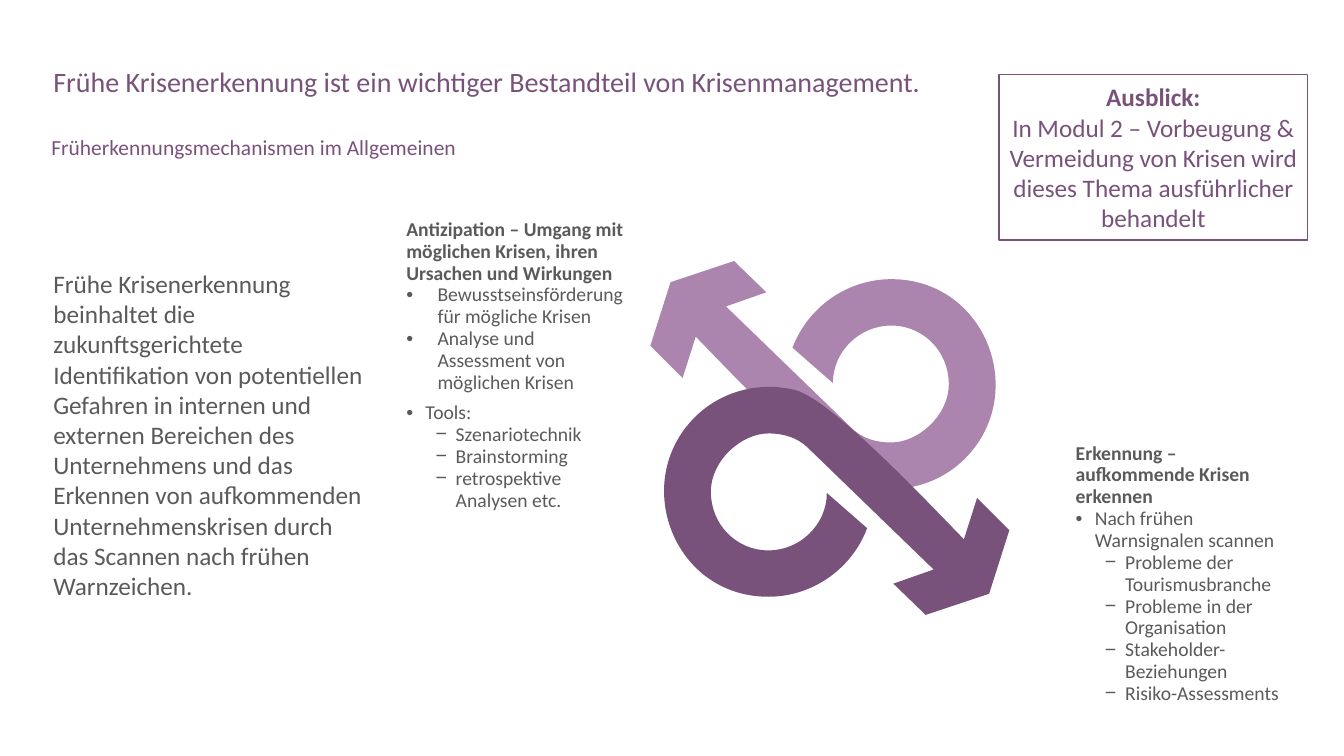
from dataclasses import dataclass

from lxml import etree
from pptx import Presentation
from pptx import util as u
from pptx.dml.color import RGBColor
from pptx.enum import shapes, text
from pptx.oxml.ns import qn


@dataclass(frozen=True)
class Theme:
    font: str = "Calibri"
    bullet_font: str = "Arial"
    plum: str = "79527B"
    lilac: str = "AB85AD"
    grey: str = "595A59"
    title: float = 20
    subtitle: float = 15.3
    body: float = 18
    detail: float = 14


THEME = Theme()
WIDTH, HEIGHT = u.Inches(13.33), u.Inches(7.5)
COLUMN, ROW = WIDTH / 100, HEIGHT / 100  # the slide is a 100 x 100 grid

# Paragraph style: bullet, level, left margin and hanging indent in inches, space before
HEADING = None
POINT = ("•", 0, 0.31, 0.31, 0)
TIGHT_POINT = ("•", 0, 0.19, 0.19, 0)
SPACED_POINT = ("•", 0, 0.19, 0.19, 6)
DASH = ("−", 1, 0.49, 0.2, 0)

# Looped arrow in a 3.76 x 2.33 field: two numbers are a corner, six are a curve
ARROW_FIELD = (3.76, 2.33)
ARROW = [
    (3.12, 1.96), (2.86, 2.22, 2.48, 2.32, 2.12, 2.23), (1.76, 2.13, 0.81, 1.12, 0.45, 0.75),
    (0.32, 1.16), (0, 0.84), (0.2, 0.21), (0.83, 0), (1.15, 0.31), (0.75, 0.45), (2.01, 1.67),
    (2.1, 1.75, 2.22, 1.8, 2.39, 1.8), (2.65, 1.8, 2.96, 1.54, 2.96, 1.22),
    (2.96, 0.9, 2.71, 0.64, 2.39, 0.64), (2.07, 0.64, 1.81, 0.9, 1.81, 1.21),
    (1.41, 0.86), (1.56, 0.46, 1.95, 0.18, 2.39, 0.18), (3.33, 0.18, 3.76, 1.32, 3.12, 1.96),
]


def place(box):
    left, top, width, height = box
    return [u.Emu(round(v)) for v in (left * COLUMN, top * ROW, width * COLUMN, height * ROW)]


def style(paragraph, size, color, bold=False):
    for run in paragraph.runs:
        run.font.name, run.font.size, run.font.bold = THEME.font, u.Pt(size), bold
        run.font.color.rgb = RGBColor.from_string(color)


def set_insets(frame, side, end):
    frame.word_wrap = True
    frame.margin_left = frame.margin_right = u.Inches(side)
    frame.margin_top = frame.margin_bottom = u.Inches(end)


def add_bullet(paragraph, mark, level, margin, hanging, before):
    paragraph.level = level
    properties = paragraph._p.get_or_add_pPr()
    properties.set("marL", str(u.Inches(margin)))
    properties.set("indent", str(-u.Inches(hanging)))
    color = etree.SubElement(properties, qn("a:buClr"))
    etree.SubElement(color, qn("a:srgbClr"), val=THEME.grey)
    etree.SubElement(properties, qn("a:buFont"), typeface=THEME.bullet_font)
    etree.SubElement(properties, qn("a:buChar"), char=mark)
    if before:
        paragraph.space_before = u.Pt(before)


def add_statement(slide, box, words, size, color, spacing=1.0, anchor=text.MSO_ANCHOR.TOP):
    frame = slide.shapes.add_textbox(*place(box)).text_frame
    set_insets(frame, 0.1, 0.05)
    frame.vertical_anchor = anchor
    frame.text = words
    frame.paragraphs[0].line_spacing = spacing
    style(frame.paragraphs[0], size, color)


def add_details(slide, box, entries):
    frame = slide.shapes.add_textbox(*place(box)).text_frame
    set_insets(frame, 0.04, 0.02)
    frame.auto_size = text.MSO_AUTO_SIZE.SHAPE_TO_FIT_TEXT
    frame.text = "\n".join(words for _, words in entries)
    for paragraph, (kind, _) in zip(frame.paragraphs, entries):
        if kind:
            add_bullet(paragraph, *kind)
        paragraph.line_spacing = 0.93
        style(paragraph, THEME.detail, THEME.grey, bold=kind is HEADING)


def curve_points(outline):
    """Start point, then three points for each cubic curve; a corner repeats its point."""
    points = [outline[0]]
    for part in outline[1:]:
        numbers = part * 3 if len(part) == 2 else part
        points += zip(numbers[::2], numbers[1::2])
    return points


def bend(freeform):
    """Join each three line segments into one cubic curve."""
    outline = freeform._element.find(".//" + qn("a:path"))
    lines = outline.findall(qn("a:lnTo"))
    for first in range(0, len(lines), 3):
        curve = etree.Element(qn("a:cubicBezTo"))
        lines[first].addprevious(curve)
        for line in lines[first:first + 3]:
            curve.append(line[0])
            outline.remove(line)


def add_looped_arrow(slide, box, color, turned=False):
    left, top, width, height = place(box)
    across, down = ARROW_FIELD
    points = curve_points(ARROW)
    if turned:
        points = [(across - x, down - y) for x, y in points]
    spots = [(round(left + x / across * width), round(top + y / down * height))
             for x, y in points]
    builder = slide.shapes.build_freeform(*spots[0])
    builder.add_line_segments(spots[1:], close=True)
    arrow = builder.convert_to_shape()
    bend(arrow)
    arrow.shadow.inherit = False
    arrow.fill.solid()
    arrow.fill.fore_color.rgb = RGBColor.from_string(color)
    arrow.line.fill.background()


def add_outlook(slide, box, heading, words):
    panel = slide.shapes.add_shape(shapes.MSO_SHAPE.RECTANGLE, *place(box))
    panel.shadow.inherit = False
    panel.fill.background()
    panel.line.color.rgb = RGBColor.from_string(THEME.plum)
    panel.line.width = u.Pt(1)
    frame = panel.text_frame
    set_insets(frame, 0.1, 0.05)
    frame.vertical_anchor = text.MSO_ANCHOR.MIDDLE
    frame.text = f"{heading}\n{words}"
    for paragraph, bold in zip(frame.paragraphs, (True, False)):
        paragraph.alignment = text.PP_ALIGN.CENTER
        style(paragraph, THEME.body, THEME.plum, bold)


def main():
    deck = Presentation()
    deck.slide_width, deck.slide_height = WIDTH, HEIGHT
    slide = deck.slides.add_slide(deck.slide_layouts[6])

    # Definition on the left, title and subtitle on top
    add_statement(
        slide, (3.23, 23.87, 25.21, 67.2),
        "Frühe Krisenerkennung beinhaltet die zukunftsgerichtete Identifikation von "
        "potentiellen Gefahren in internen und externen Bereichen des Unternehmens und das "
        "Erkennen von aufkommenden Unternehmenskrisen durch das Scannen nach frühen "
        "Warnzeichen.",
        THEME.body, THEME.grey, anchor=text.MSO_ANCHOR.MIDDLE)
    add_statement(
        slide, (3.23, 8.4, 94.07, 8.53),
        "Frühe Krisenerkennung ist ein wichtiger Bestandteil von Krisenmanagement.",
        THEME.title, THEME.plum, spacing=0.9)
    add_statement(slide, (3.08, 18, 94.22, 3.73), "Früherkennungsmechanismen im Allgemeinen",
                  THEME.subtitle, THEME.plum, spacing=0.7)

    # Interlocked arrows
    add_looped_arrow(slide, (48.39, 34.53, 28.21, 31.07), THEME.lilac)
    add_looped_arrow(slide, (46.89, 50.27, 28.21, 31.07), THEME.plum, turned=True)

    # Explanations beside the arrows
    add_details(slide, (29.93, 28.67, 17.1, 44.13), [
        (HEADING, "Antizipation – Umgang mit möglichen Krisen, ihren Ursachen und Wirkungen"),
        (POINT, "Bewusstseinsförderung für mögliche Krisen"),
        (POINT, "Analyse und Assessment von möglichen Krisen"),
        (SPACED_POINT, "Tools:"),
        (DASH, "Szenariotechnik"),
        (DASH, "Brainstorming"),
        (DASH, "retrospektive Analysen etc."),
    ])
    add_details(slide, (79.74, 58.27, 16.05, 39.47), [
        (HEADING, "Erkennung – aufkommende Krisen erkennen"),
        (TIGHT_POINT, "Nach frühen Warnsignalen scannen"),
        (DASH, "Probleme der Tourismusbranche"),
        (DASH, "Probleme in der Organisation"),
        (DASH, "Stakeholder-Beziehungen"),
        (DASH, "Risiko-Assessments"),
    ])

    # Outlook panel
    add_outlook(slide, (74.34, 9.87, 22.96, 21.87), "Ausblick:",
                "In Modul 2 – Vorbeugung & Vermeidung von Krisen wird dieses Thema "
                "ausführlicher behandelt")

    deck.save("out.pptx")


if __name__ == "__main__":
    main()
